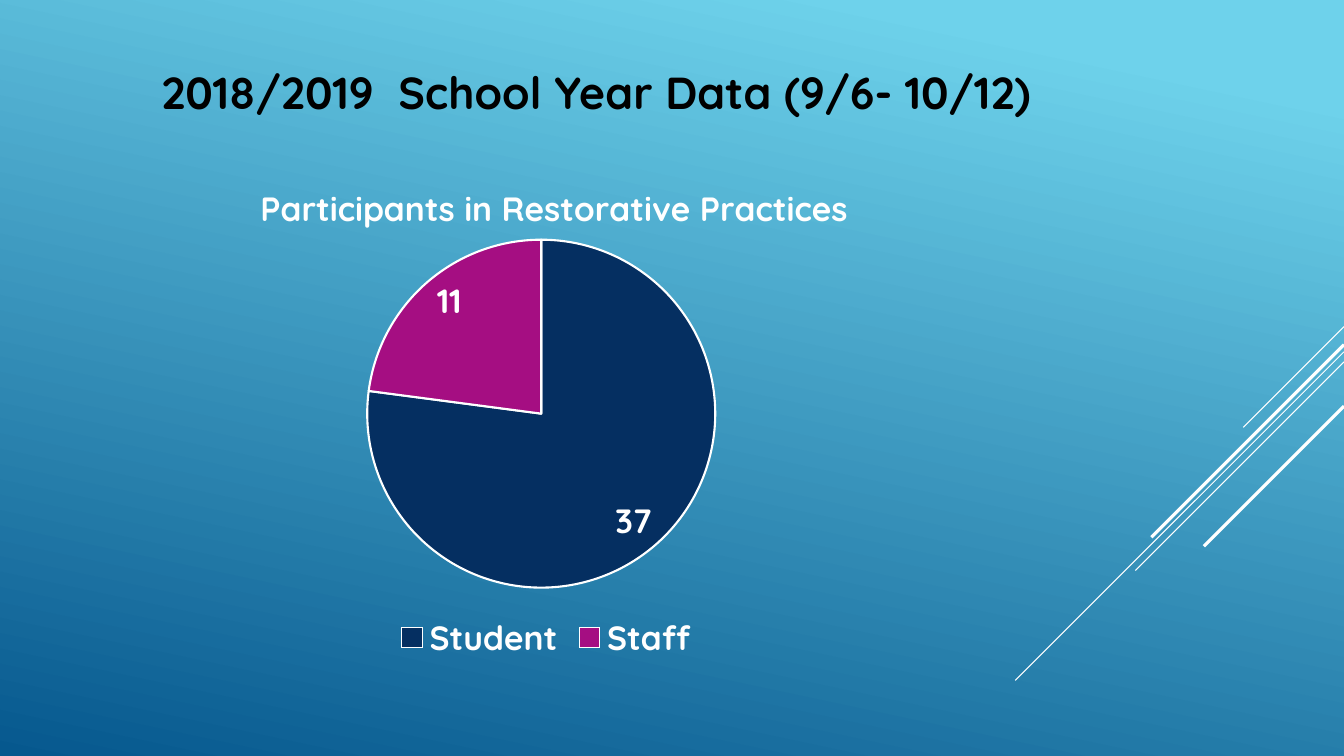
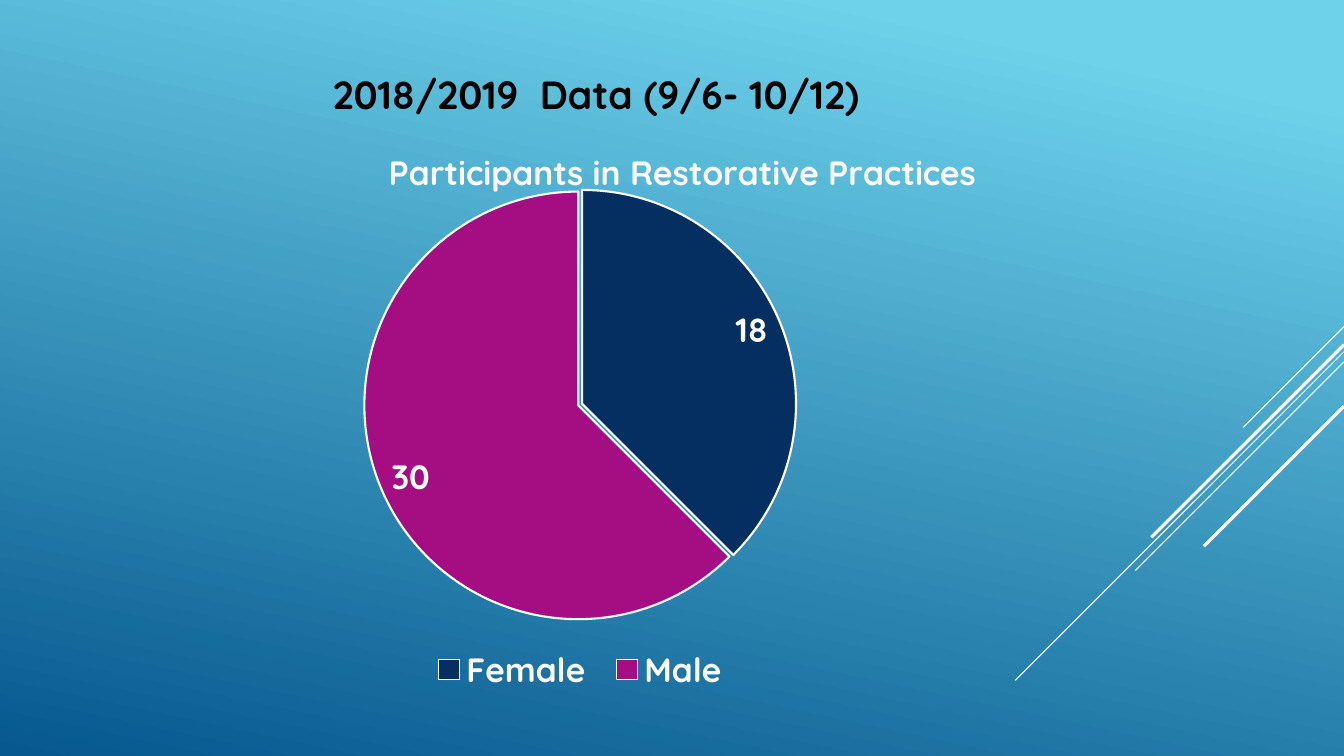
from lxml import etree
from pptx import Presentation
from pptx.chart.data import CategoryChartData
from pptx.dml.color import RGBColor
from pptx.enum.chart import XL_CHART_TYPE, XL_LABEL_POSITION, XL_LEGEND_POSITION
from pptx.enum.shapes import MSO_CONNECTOR
from pptx.enum.text import MSO_ANCHOR, MSO_AUTO_SIZE, PP_ALIGN
from pptx.oxml.ns import qn
from pptx.util import Inches, Pt

PIE = XL_CHART_TYPE.PIE
BEST_FIT = XL_LABEL_POSITION.BEST_FIT
LEGEND_BOTTOM = XL_LEGEND_POSITION.BOTTOM
STRAIGHT = MSO_CONNECTOR.STRAIGHT
MIDDLE = MSO_ANCHOR.MIDDLE
NO_AUTOFIT = MSO_AUTO_SIZE.NONE
LEFT = PP_ALIGN.LEFT

WIDTH, HEIGHT = 13.33, 7.5
TITLE_ONLY = 5
FONT = "Quicksand"
WHITE, BLACK = "FFFFFF", "000000"
SLICE_COLORS = ("052F61", "A50E82")
GRADIENT = ((0.1, "6ED2EB"), (1, "06588E"))
GRADIENT_ANGLE = 258
CHART_TEXT = {"name": FONT, "size": Pt(24), "bold": True}
DIAGONALS = (
    (3.24, 1.0, 0.75),
    (3.49, 3.26, 0.75),
    (3.59, 2.07, 0.75),
    (3.42, 1.91, 2.25),
    (4.03, 1.39, 2.25),
)
CHART_TITLE = "Participants in Restorative Practices"
SLIDES = (
    {
        "title": "2018/2019  School Year Data (9/6- 10/12)",
        "title_box": (1.5, 0.59, 9.47, 0.64),
        "title_size": 32,
        "chart_box": (0.75, 1.56, 9.33, 5.04),
        "values": {"Student": 37, "Staff": 11},
        "heading_at": {"x": 0.19, "y": 0.04},
        "pie_at": {"x": 0.31, "y": 0.16, "w": 0.37, "h": 0.69},
        "explosion": 0,
    },
    {
        "title": "2018/2019  Data (9/6- 10/12)",
        "title_box": (3.2, 0.65, 6.13, 0.57),
        "title_size": 28,
        "chart_box": (1.09, 1.05, 9.33, 5.87),
        "values": {"Female ": 18, "Male": 30},
        "heading_at": {"x": 0.29, "y": 0.06},
        "pie_at": {"x": 0.27, "y": 0.14, "w": 0.46, "h": 0.73},
        "explosion": 1,
    },
)


def color(value):
    return RGBColor.from_string(value)


def format_font(font, values, font_color):
    for name, value in values.items():
        setattr(font, name, value)
    font.color.rgb = color(font_color)


def set_background(master):
    fill = master.background.fill
    fill.gradient()
    fill.gradient_angle = GRADIENT_ANGLE
    for stop, (position, stop_color) in zip(fill.gradient_stops, GRADIENT):
        stop.position = position
        stop.color.rgb = color(stop_color)


def move_diagonals_to_master(slide, master):
    for number, (top, span, weight) in enumerate(DIAGONALS):
        points = (WIDTH, top, WIDTH - span, top + span)
        line = slide.shapes.add_connector(STRAIGHT, *map(Inches, points))
        line.line.color.rgb = color(WHITE)
        line.line.width = Pt(weight)
        element = line._element
        etree.SubElement(element.spPr, qn("a:effectLst"))
        element.nvCxnSpPr.cNvPr.id = 20 + number
        master.shapes._spTree.append(element)


def add_title(slide, text, box, size):
    title = slide.shapes.title
    title.left, title.top, title.width, title.height = map(Inches, box)
    frame = title.text_frame
    frame.text = text
    frame.word_wrap = True
    frame.auto_size = NO_AUTOFIT
    frame.vertical_anchor = MIDDLE
    paragraph = frame.paragraphs[0]
    paragraph.alignment = LEFT
    style = {"name": FONT, "size": Pt(size), "bold": True}
    format_font(paragraph.runs[0].font, style, BLACK)


def set_layout(parent, index, fractions, inner=False):
    for existing in parent.findall(qn("c:layout")):
        parent.remove(existing)
    layout = etree.Element(qn("c:layout"))
    manual = etree.SubElement(layout, qn("c:manualLayout"))
    if inner:
        etree.SubElement(manual, qn("c:layoutTarget"), val="inner")
    for axis in ("x", "y"):
        etree.SubElement(manual, qn(f"c:{axis}Mode"), val="edge")
    for name, value in fractions.items():
        etree.SubElement(manual, qn(f"c:{name}"), val=str(value))
    parent.insert(index, layout)


def format_slices(series, explosion):
    outline = series.format.line
    outline.color.rgb = color(WHITE)
    outline.width = Pt(1.5)
    if explosion:
        element = etree.Element(qn("c:explosion"), val=str(explosion))
        series._element.find(qn("c:spPr")).addnext(element)
    for index, slice_color in enumerate(SLICE_COLORS):
        point = series.points[index].format
        point.fill.solid()
        point.fill.fore_color.rgb = color(slice_color)
        point.line.color.rgb = color(WHITE)
        point.line.width = Pt(1.5)


def add_pie(slide, box, values, heading_at, pie_at, explosion):
    data = CategoryChartData()
    data.categories = list(values)
    data.add_series("Series 1", list(values.values()))
    chart = slide.shapes.add_chart(PIE, *map(Inches, box), data).chart
    format_font(chart.font, {"name": FONT, "size": Pt(10)}, WHITE)

    chart.has_title = True
    heading = chart.chart_title
    heading.include_in_layout = False
    heading.text_frame.text = CHART_TITLE
    run = heading.text_frame.paragraphs[0].runs[0]
    format_font(run.font, CHART_TEXT, WHITE)
    set_layout(heading._element, 1, heading_at)

    chart.has_legend = True
    chart.legend.position = LEGEND_BOTTOM
    chart.legend.include_in_layout = False
    format_font(chart.legend.font, CHART_TEXT, WHITE)

    plot = chart.plots[0]
    plot.vary_by_categories = True
    format_slices(plot.series[0], explosion)
    labels = plot.series[0].data_labels
    labels.show_value = True
    labels.position = BEST_FIT
    format_font(labels.font, CHART_TEXT, WHITE)
    plot_area = chart._chartSpace.chart.plotArea
    set_layout(plot_area, 0, pie_at, inner=True)


def add_data_slide(presentation, content):
    slide = presentation.slides.add_slide(presentation.slide_layouts[TITLE_ONLY])
    add_pie(
        slide,
        content["chart_box"],
        content["values"],
        content["heading_at"],
        content["pie_at"],
        content["explosion"],
    )
    add_title(slide, content["title"], content["title_box"], content["title_size"])
    return slide


def main():
    presentation = Presentation()
    presentation.slide_width = Inches(WIDTH)
    presentation.slide_height = Inches(HEIGHT)
    master = presentation.slide_master
    set_background(master)
    slides = [add_data_slide(presentation, content) for content in SLIDES]
    move_diagonals_to_master(slides[0], master)
    presentation.save("out.pptx")


if __name__ == "__main__":
    main()
